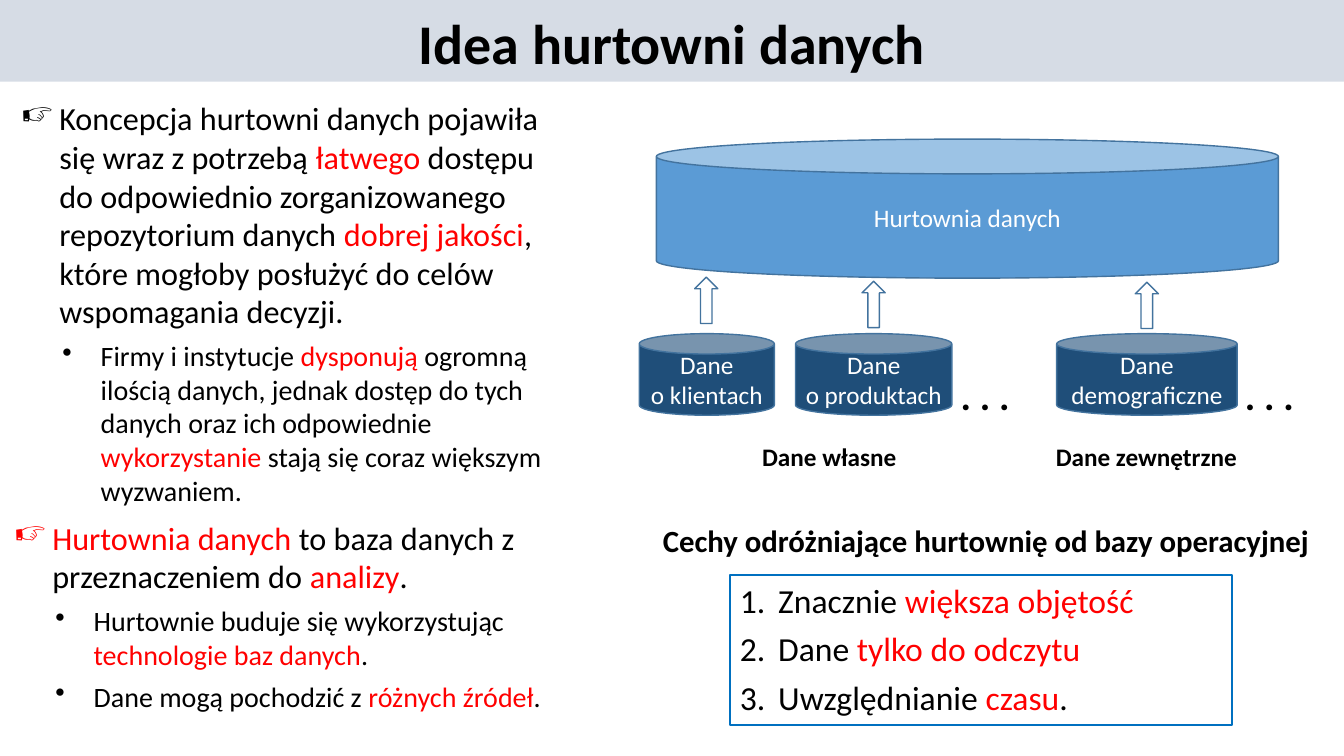
from lxml import etree
from pptx import Presentation
from pptx.dml.color import RGBColor
from pptx.enum.shapes import MSO_SHAPE
from pptx.enum.text import MSO_ANCHOR, PP_ALIGN
from pptx.oxml.ns import qn
from pptx.util import Inches, Pt

RECT, CAN, ARROW = MSO_SHAPE.RECTANGLE, MSO_SHAPE.CAN, MSO_SHAPE.UP_ARROW
TOP, MIDDLE, BOTTOM = MSO_ANCHOR.TOP, MSO_ANCHOR.MIDDLE, MSO_ANCHOR.BOTTOM
LEFT, CENTER, RIGHT = PP_ALIGN.LEFT, PP_ALIGN.CENTER, PP_ALIGN.RIGHT

BLACK = RGBColor(0x00, 0x00, 0x00)
WHITE = RGBColor(0xFF, 0xFF, 0xFF)
RED = RGBColor(0xFF, 0x00, 0x00)
GREY = RGBColor(0xD6, 0xDC, 0xE5)
BLUE = RGBColor(0x5B, 0x9B, 0xD5)
NAVY = RGBColor(0x1F, 0x4E, 0x79)
EDGE = RGBColor(0x43, 0x73, 0x9E)
FRAME = RGBColor(0x00, 0x70, 0xC0)


class Board:
    font = "Calibri"

    def __init__(self, slide):
        self.slide = slide

    def shape(self, kind, box, fill=None, line=None, width=1):
        item = self.slide.shapes.add_shape(kind, *map(Inches, box))
        item.shadow.inherit = False
        if fill is None:
            item.fill.background()
        else:
            item.fill.solid()
            item.fill.fore_color.rgb = fill
        if line is None:
            item.line.fill.background()
        else:
            item.line.color.rgb = line
            item.line.width = Pt(width)
        return item

    def text(self, box):
        return self.slide.shapes.add_textbox(*map(Inches, box))

    def frame(self, item, anchor=TOP):
        frame = item.text_frame
        frame.word_wrap = True
        frame.vertical_anchor = anchor
        return frame

    def para(self, frame, runs, size, align=LEFT, color=BLACK, bold=False,
             space=0, lead=None):
        """Add a paragraph; runs alternate between the base colour and red."""
        first = frame.paragraphs[0]
        para = frame.add_paragraph() if first.runs else first
        para.alignment = align
        para.space_before = Pt(space)
        if lead:
            para.line_spacing = lead
        for index, words in enumerate(runs):
            if not words:
                continue
            run = para.add_run()
            run.text = words
            run.font.name = self.font
            run.font.size = Pt(size)
            run.font.bold = bold
            run.font.color.rgb = RED if index % 2 else color
        return para

    def bullet(self, para, indent, mark=None):
        """Hang a mark, or a number when no mark is given."""
        props = para._p.get_or_add_pPr()
        props.set("marL", str(Inches(indent)))
        props.set("indent", str(-Inches(0.38)))
        if mark:
            etree.SubElement(props, qn("a:buChar"), char=mark)
        else:
            etree.SubElement(props, qn("a:buAutoNum"), type="arabicPeriod")

    def label(self, box, words, size, align=CENTER, **style):
        frame = self.frame(self.text(box))
        self.para(frame, [words], size, align, bold=True, **style)

    def can(self, box, fill, lines):
        frame = self.frame(self.shape(CAN, box, fill, EDGE), MIDDLE)
        for words in lines:
            self.para(frame, [words], 18, CENTER, WHITE)

    def points(self, box, items):
        frame = self.frame(self.text(box))
        for level, space, runs in items:
            para = self.para(frame, runs, (23, 20)[level], space=space)
            self.bullet(para, (0.38, 0.79)[level], "☞•"[level])


def main():
    deck = Presentation()
    deck.slide_width, deck.slide_height = Inches(13.33), Inches(7.5)
    board = Board(deck.slides.add_slide(deck.slide_layouts[6]))

    # Title band
    band = board.shape(RECT, (0, 0, 13.33, 0.81), GREY)
    board.para(board.frame(band, BOTTOM), ["Idea hurtowni danych"], 40, CENTER,
               bold=True, lead=0.9)

    # Warehouse and its sources
    board.can((6.51, 1.38, 6.17, 1.38), BLUE, ["Hurtownia danych"])
    for left, top in ((6.89, 2.75), (8.55, 2.79), (11.26, 2.8)):
        board.shape(ARROW, (left, top, 0.23, 0.46), line=EDGE)
    for left, width, lines in (
        (6.34, 1.34, ["Dane", "o klientach"]),
        (7.89, 1.55, ["Dane", "o produktach"]),
        (10.48, 1.79, ["Dane demograficzne"]),
    ):
        board.can((left, 3.31, width, 0.81), NAVY, lines)
    for left, width in ((9.32, 0.9), (12.23, 0.72)):
        board.label((left, 3.63, width, 0.57), ". . .", 28)
    board.label((7.28, 4.33, 1.89, 0.4), "Dane własne", 18)
    board.label((10.22, 4.33, 2.3, 0.4), "Dane zewnętrzne", 18)

    # Distinguishing features
    board.label((5.8, 5.09, 7.28, 0.51),
                "Cechy odróżniające hurtownię od bazy operacyjnej", 22, RIGHT,
                space=6, lead=Pt(28.8))
    traits = board.frame(board.shape(RECT, (7.24, 5.7, 4.98, 1.49),
                                     line=FRAME, width=1.5))
    for runs in (
        ["Znacznie ", "większa objętość"],
        ["Dane ", "tylko do odczytu"],
        ["Uwzględnianie ", "czasu", "."],
    ):
        board.bullet(board.para(traits, runs, 24, space=6, lead=Pt(28.8)), 0.38)

    # Points on the left: level, space before, runs
    board.points((0.11, 0.93, 5.62, 4.16), [
        (0, 6, ["Koncepcja hurtowni danych pojawiła się wraz z potrzebą ",
                "łatwego",
                " dostępu do odpowiednio zorganizowanego repozytorium danych ",
                "dobrej jakości",
                ", które mogłoby posłużyć do celów wspomagania decyzji."]),
        (1, 6, ["Firmy i instytucje ", "dysponują",
                " ogromną ilością danych, jednak dostęp do tych danych"
                " oraz ich odpowiednie ",
                "wykorzystanie ", "stają się coraz większym wyzwaniem."]),
    ])
    board.points((0.04, 5.09, 5.49, 2.05), [
        (0, 0, ["", "Hurtownia danych ", "to baza danych z przeznaczeniem do ",
                "analizy", "."]),
        (1, 6, ["Hurtownie buduje się wykorzystując ",
                "technologie baz danych", "."]),
        (1, 6, ["Dane mogą pochodzić z ", "różnych źródeł", "."]),
    ])

    deck.save("out.pptx")


if __name__ == "__main__":
    main()
